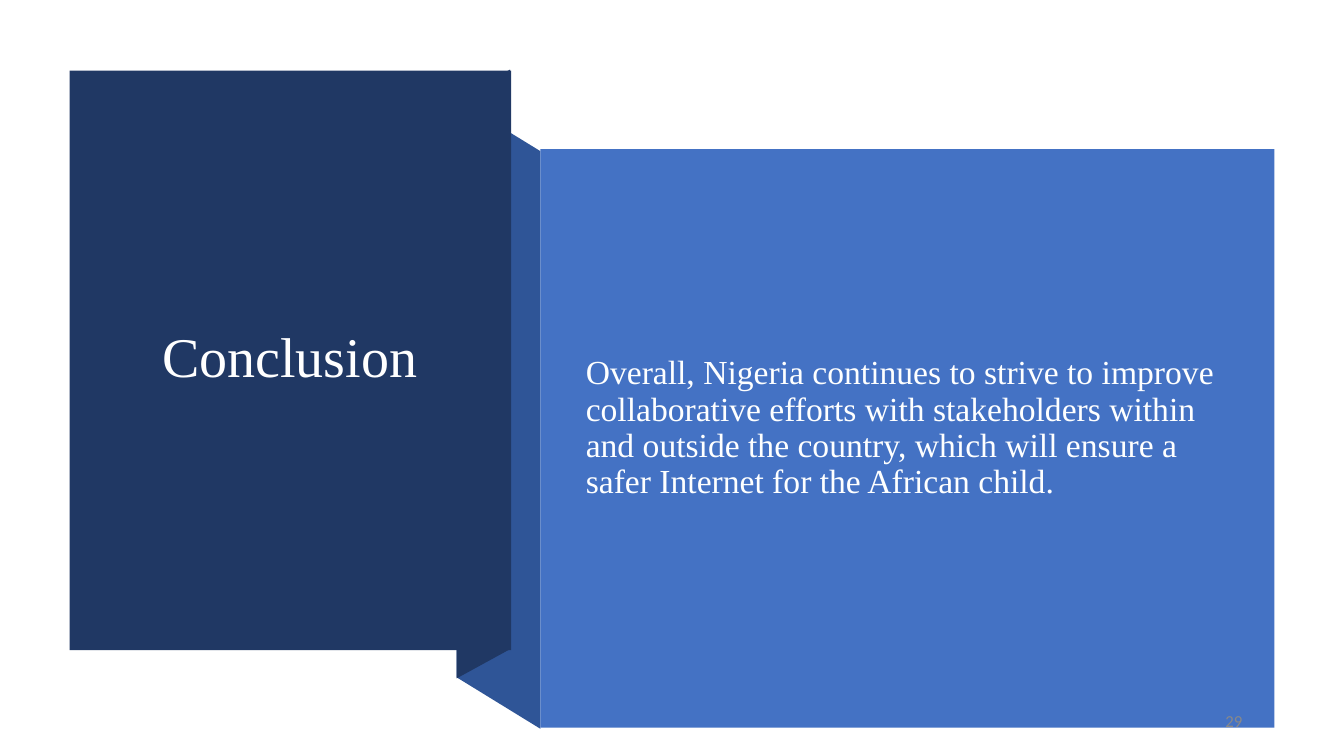
from lxml import etree
from pptx import Presentation
from pptx.dml.color import RGBColor
from pptx.enum.shapes import MSO_SHAPE
from pptx.enum.text import MSO_ANCHOR, MSO_AUTO_SIZE, PP_ALIGN
from pptx.oxml.ns import qn
from pptx.util import Inches, Pt

RECT = MSO_SHAPE.RECTANGLE
MIDDLE = MSO_ANCHOR.MIDDLE
NO_FIT = MSO_AUTO_SIZE.NONE
LEFT, CENTER, RIGHT = PP_ALIGN.LEFT, PP_ALIGN.CENTER, PP_ALIGN.RIGHT

COLORS = {
    "navy": "203864",
    "fold": "2F5597",
    "panel": "4472C4",
    "white": "FFFFFF",
    "body": "FEFFFF",
    "gray": "898989",
}
SERIF, SANS = "Times New Roman", "Calibri"


def rgb(name):
    """Return the named colour."""
    return RGBColor.from_string(COLORS[name])


def paint(shape, color):
    """Give a shape a flat fill without line or shadow."""
    shape.shadow.inherit = False
    shape.fill.solid()
    shape.fill.fore_color.rgb = rgb(color)
    shape.line.fill.background()


def add_fold(slide, points, color):
    """Draw a closed outline through points in inches."""
    start, *rest = [(Inches(x), Inches(y)) for x, y in points]
    pen = slide.shapes.build_freeform(*start, scale=1.0)
    pen.add_line_segments(rest, close=True)
    paint(pen.convert_to_shape(), color)


def add_panel(slide, box, color):
    """Draw a flat rectangle."""
    paint(slide.shapes.add_shape(RECT, *map(Inches, box)), color)


def set_text(shape, box, text, size, font, color, align, line=1.0, before=0):
    """Place a text shape and fill it with one formatted run."""
    shape.left, shape.top, shape.width, shape.height = map(Inches, box)
    frame = shape.text_frame
    frame.word_wrap = True
    frame.auto_size = NO_FIT
    frame.vertical_anchor = MIDDLE
    para = frame.paragraphs[0]
    para.alignment = align
    para.line_spacing = line
    para.space_before = Pt(before)
    run = para.add_run()
    run.text = text
    run.font.size = Pt(size)
    run.font.name = font
    run.font.color.rgb = rgb(color)
    return para


def drop_bullet(para):
    """Remove the bullet and indent of a paragraph."""
    props = para._p.get_or_add_pPr()
    props.set("marL", "0")
    props.set("indent", "0")
    etree.SubElement(props, qn("a:buNone"))


def main():
    """Build the conclusion slide."""
    deck = Presentation()
    deck.slide_width, deck.slide_height = Inches(13.33), Inches(7.5)
    slide = deck.slides.add_slide(deck.slide_layouts[1])
    title, body = slide.placeholders

    add_fold(slide, [(5.36, 7.23), (4.53, 6.72), (4.53, 0.99), (5.36, 1.5)], "fold")
    add_fold(slide, [(5.06, 6.44), (4.53, 6.73), (4.53, 0.98), (5.06, 0.69)], "navy")
    add_panel(slide, (0.69, 0.7, 4.38, 5.75), "navy")
    add_panel(slide, (5.36, 1.48, 7.28, 5.74), "panel")

    for holder in (title, body):
        slide.shapes._spTree.append(holder._element)
    set_text(title, (1.02, 1.07, 3.71, 4.99), "Conclusion",
             40, SERIF, "white", CENTER, 0.9)
    para = set_text(
        body, (5.71, 1.88, 6.51, 4.74),
        "Overall, Nigeria continues to strive to improve collaborative efforts "
        "with stakeholders within and outside the country, which will ensure a "
        "safer Internet for the African child.",
        24, SERIF, "body", LEFT, 0.9, 10)
    drop_bullet(para)

    box = (9.42, 6.95, 3, 0.4)
    number = slide.shapes.add_textbox(*map(Inches, box))
    set_text(number, box, "29", 12, SANS, "gray", RIGHT)
    deck.save("out.pptx")


if __name__ == "__main__":
    main()
